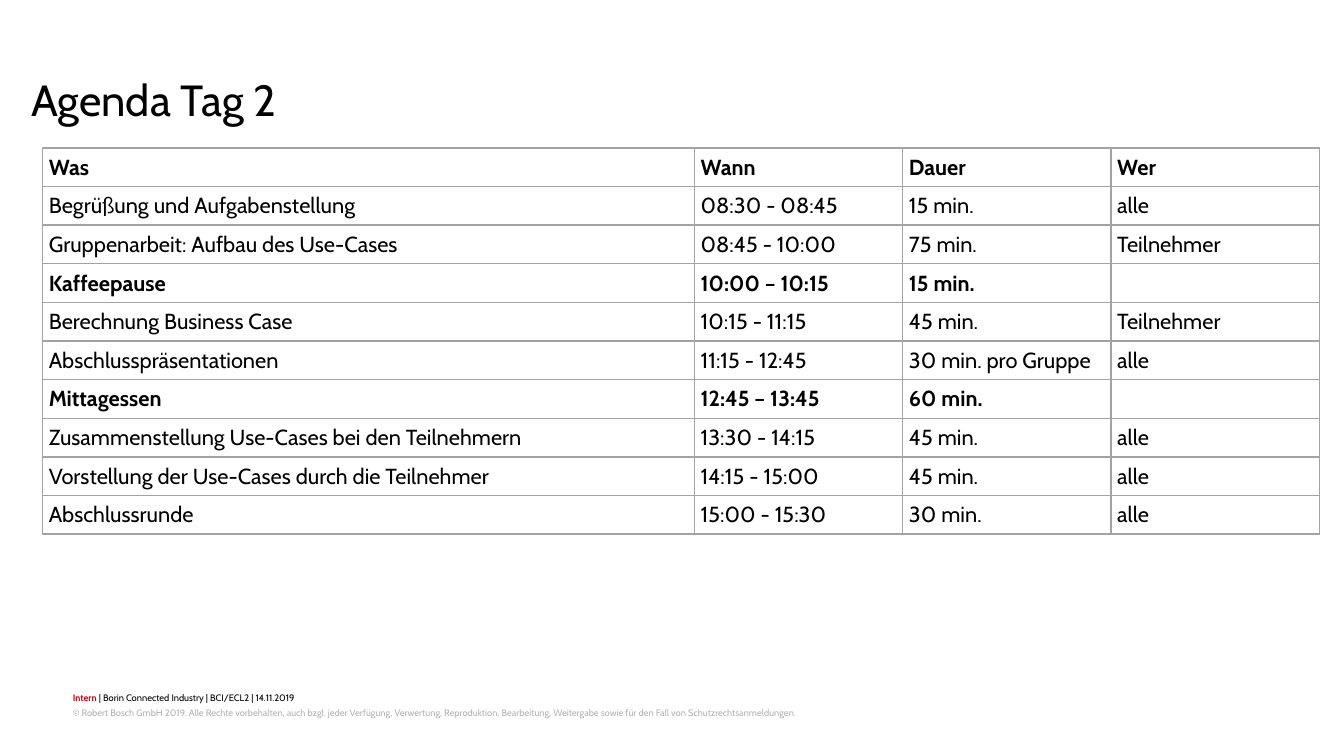
import lxml.etree
import pptx
import pptx.dml.color
import pptx.enum.text
import pptx.oxml.ns
import pptx.util

AGENDA = [
    ("Was", "Wann", "Dauer", "Wer"),
    ("Begrüßung und Aufgabenstellung", "08:30 - 08:45", "15 min.", "alle"),
    ("Gruppenarbeit: Aufbau des Use-Cases", "08:45 - 10:00", "75 min.", "Teilnehmer"),
    ("Kaffeepause", "10:00 – 10:15", "15 min.", ""),
    ("Berechnung Business Case", "10:15 - 11:15", "45 min.", "Teilnehmer"),
    ("Abschlusspräsentationen", "11:15 - 12:45", "30 min. pro Gruppe", "alle"),
    ("Mittagessen", "12:45 – 13:45", "60 min.", ""),
    ("Zusammenstellung Use-Cases bei den Teilnehmern", "13:30 - 14:15", "45 min.", "alle"),
    ("Vorstellung der Use-Cases durch die Teilnehmer", "14:15 - 15:00", "45 min.", "alle"),
    ("Abschlussrunde", "15:00 - 15:30", "30 min.", "alle"),
]
BOLD_ROWS = {"Was", "Kaffeepause", "Mittagessen"}


def color(value):
    return pptx.dml.color.RGBColor.from_string(value)


class AgendaSlide:
    """Style and current slide, measured on a grid of 48 columns and 27 rows."""

    font = "Cabin"
    black, red, gray, border = "000000", "D70012", "B2B3B5", "A3A3A3"
    cell_margin = pptx.util.Pt(4)

    def __init__(self, presentation):
        self.unit = presentation.slide_width / 48
        self.slide = presentation.slides.add_slide(presentation.slide_layouts[6])

    def grid(self, *lengths):
        return [round(length * self.unit) for length in lengths]

    def style(self, font, size, fill, bold=False):
        font.name, font.size, font.bold = self.font, pptx.util.Pt(size), bold
        font.color.rgb = color(fill)

    def text(self, place, parts, size, line_spacing, space_after=0):
        frame = self.slide.shapes.add_textbox(*self.grid(*place)).text_frame
        frame.word_wrap = True
        frame.margin_left = frame.margin_right = frame.margin_top = frame.margin_bottom = 0
        paragraph = frame.paragraphs[0]
        paragraph.line_spacing = line_spacing
        paragraph.space_after = pptx.util.Pt(space_after)
        for words, fill, bold in parts:
            run = paragraph.add_run()
            run.text = words
            self.style(run.font, size, fill, bold)

    def table(self, left, top, widths, row_height, rows, size):
        place = self.grid(left, top, sum(widths), row_height * len(rows))
        table = self.slide.shapes.add_table(len(rows), len(widths), *place).table
        table.first_row = table.horz_banding = False
        for column, width in zip(table.columns, self.grid(*widths)):
            column.width = width
        for row, values in zip(table.rows, rows):
            row.height = self.grid(row_height)[0]
            for cell, value in zip(row.cells, values):
                self.cell(cell, value, size, values[0] in BOLD_ROWS)

    def cell(self, cell, value, size, bold):
        cell.margin_left = cell.margin_right = self.cell_margin
        cell.margin_top = cell.margin_bottom = self.cell_margin
        cell.fill.background()
        self.borders(cell)
        paragraph = cell.text_frame.paragraphs[0]
        paragraph.text = value
        for run in paragraph.runs:
            self.style(run.font, size, self.black, bold)
        if not value:
            end = lxml.etree.SubElement(
                paragraph._p, pptx.oxml.ns.qn("a:endParaRPr"), sz=str(size * 100))
            lxml.etree.SubElement(end, pptx.oxml.ns.qn("a:latin"), typeface=self.font)

    def borders(self, cell):
        properties = cell._tc.get_or_add_tcPr()
        for index, side in enumerate(("lnL", "lnR", "lnT", "lnB")):
            line = lxml.etree.Element(
                pptx.oxml.ns.qn(f"a:{side}"), w=str(pptx.util.Pt(1)))
            fill = lxml.etree.SubElement(line, pptx.oxml.ns.qn("a:solidFill"))
            lxml.etree.SubElement(fill, pptx.oxml.ns.qn("a:srgbClr"), val=self.border)
            properties.insert(index, line)


def main():
    presentation = pptx.Presentation()
    presentation.slide_width = pptx.util.Inches(12)
    presentation.slide_height = pptx.util.Inches(6.75)
    agenda = AgendaSlide(presentation)
    agenda.text((2.6, 24.68, 40.04, 0.48), [
        ("Intern", agenda.red, True),
        (" | Borin Connected Industry | BCI/ECL2 | 14.11.2019", agenda.black, False),
    ], 6, 1.07, 1)
    agenda.text((2.6, 25.16, 40.04, 0.96), [
        ("© Robert Bosch GmbH 2019. Alle Rechte vorbehalten, auch bzgl. jeder Verfügung, "
         "Verwertung, Reproduktion, Bearbeitung, Weitergabe sowie für den Fall von "
         "Schutzrechtsanmeldungen.", agenda.gray, False),
    ], 6, 1.2, 1)
    agenda.text((1.12, 2.84, 45.72, 1.72), [("Agenda Tag 2", agenda.black, False)], 28, 0.89)
    agenda.table(1.52, 5.28, (23.28, 7.44, 7.44, 7.44), 1.38, AGENDA, 14)
    presentation.save("out.pptx")


if __name__ == "__main__":
    main()
